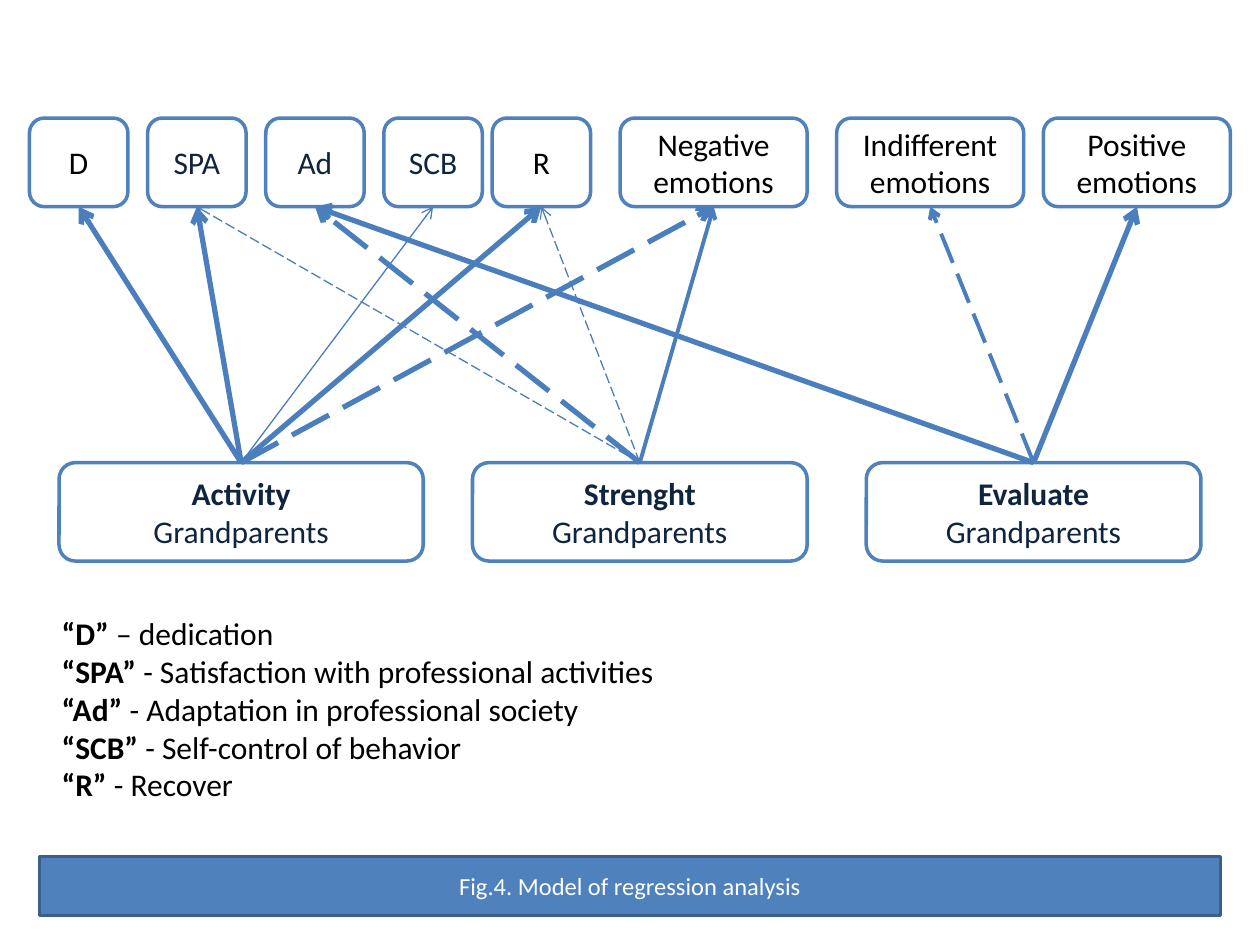
from lxml import etree
from pptx import Presentation
from pptx.dml.color import RGBColor
from pptx.enum.dml import MSO_LINE
from pptx.enum.shapes import MSO_CONNECTOR, MSO_SHAPE
from pptx.enum.text import MSO_ANCHOR, PP_ALIGN
from pptx.oxml.ns import qn
from pptx.util import Pt

RECTANGLE, ROUNDED = MSO_SHAPE.RECTANGLE, MSO_SHAPE.ROUNDED_RECTANGLE
STRAIGHT = MSO_CONNECTOR.STRAIGHT
SOLID, DASHED = MSO_LINE.SOLID, MSO_LINE.LONG_DASH
MIDDLE = MSO_ANCHOR.MIDDLE
LEFT, CENTER = PP_ALIGN.LEFT, PP_ALIGN.CENTER
TOP_SITE, BOTTOM_SITE = 0, 2

WHITE, BLACK, NAVY = "FFFFFF", "000000", "0F243E"
BLUE, DARK_BLUE, ARROW_BLUE = "4F81BD", "3A5F8C", "4B7EBC"

# Outcome name, left, width, text colour
OUTCOMES = [
    ("D", 16.88, 56.25, BLACK),
    ("SPA", 84.38, 56.25, NAVY),
    ("Ad", 151.88, 56.25, NAVY),
    ("SCB", 219.38, 56.25, NAVY),
    ("R", 281.25, 56.25, BLACK),
    ("Negative emotions", 354.38, 106.88, BLACK),
    ("Indifferent emotions", 478.12, 106.88, BLACK),
    ("Positive emotions", 596.25, 106.88, BLACK),
]
# Factor name, left, width
FACTORS = [("Activity", 33.75, 208.12), ("Strenght", 270, 191.25),
           ("Evaluate", 495, 191.25)]
# Factor, outcome, line weight, dash
EFFECTS = [
    ("Activity", "D", 3, SOLID),
    ("Strenght", "SPA", 0.75, DASHED),
    ("Activity", "SPA", 3, SOLID),
    ("Strenght", "Ad", 3, DASHED),
    ("Evaluate", "Ad", 3, SOLID),
    ("Activity", "SCB", 0.75, SOLID),
    ("Strenght", "R", 0.75, DASHED),
    ("Activity", "R", 3, SOLID),
    ("Activity", "Negative emotions", 3, DASHED),
    ("Strenght", "Negative emotions", 2.25, SOLID),
    ("Evaluate", "Indifferent emotions", 2.25, DASHED),
    ("Evaluate", "Positive emotions", 3, SOLID),
]
LEGEND = [
    ("“D” ", "– dedication"),
    ("“SPA” ", "- Satisfaction with professional activities"),
    ("“Ad” ", "- Adaptation in professional society"),
    ("“SCB” ", "- Self-control of behavior"),
    ("“R” ", "- Recover"),
]


def color(value):
    return RGBColor.from_string(value)


def add_box(page, kind, box, paragraphs, text_color, fill=WHITE, line=BLUE,
            size=18, align=CENTER):
    """Each paragraph is a list of (text, bold) spans."""
    shape = page.shapes.add_shape(kind, *map(Pt, box))
    shape.shadow.inherit = False
    shape.fill.solid()
    shape.fill.fore_color.rgb = color(fill)
    if line:
        shape.line.color.rgb = color(line)
        shape.line.width = Pt(2)
    else:
        shape.line.fill.background()
    frame = shape.text_frame
    frame.word_wrap = True
    frame.vertical_anchor = MIDDLE
    for index, spans in enumerate(paragraphs):
        para = frame.add_paragraph() if index else frame.paragraphs[0]
        para.alignment = align
        for text, bold in spans:
            span = para.add_run()
            span.text = text
            span.font.name = "Calibri"
            span.font.size = Pt(size)
            span.font.bold = bold
            span.font.color.rgb = color(text_color)
    return shape


def add_outcomes(page, top, height):
    return {name: add_box(page, ROUNDED, (left, top, width, height),
                          [[(name, False)]], text_color)
            for name, left, width, text_color in OUTCOMES}


def add_factors(page, top, height):
    return {name: add_box(page, ROUNDED, (left, top, width, height),
                          [[(name, True)], [("Grandparents", False)]], NAVY)
            for name, left, width in FACTORS}


def add_effects(page, factors, outcomes):
    for factor, outcome, weight, dash in EFFECTS:
        arrow = page.shapes.add_connector(STRAIGHT, 0, 0, 0, 0)
        arrow.begin_connect(factors[factor], TOP_SITE)
        arrow.end_connect(outcomes[outcome], BOTTOM_SITE)
        arrow.line.color.rgb = color(ARROW_BLUE)
        arrow.line.width = Pt(weight)
        arrow.line.dash_style = dash
        # Arrowhead and no shadow
        properties = arrow.line._get_or_add_ln()
        etree.SubElement(properties, qn("a:tailEnd"), type="arrow")
        etree.SubElement(arrow._element.spPr, qn("a:effectLst"))


def add_legend(page, box):
    lines = [[(term, True), (meaning, False)] for term, meaning in LEGEND]
    add_box(page, RECTANGLE, box, lines, BLACK, line=None, align=LEFT)


def add_caption(page, box):
    add_box(page, RECTANGLE, box, [[("Fig.4. Model of regression analysis", False)]],
            WHITE, fill=BLUE, line=DARK_BLUE, size=14)


def main():
    deck = Presentation()
    deck.slide_width, deck.slide_height = Pt(720), Pt(540)
    page = deck.slides.add_slide(deck.slide_layouts[6])
    # Text below the model
    add_legend(page, (28.12, 343.12, 669.38, 123.75))
    add_caption(page, (22.5, 489.38, 675, 33.75))
    # Regression model
    outcomes = add_outcomes(page, 67.5, 50.62)
    factors = add_factors(page, 264.38, 56.25)
    add_effects(page, factors, outcomes)
    deck.save("out.pptx")


if __name__ == "__main__":
    main()
